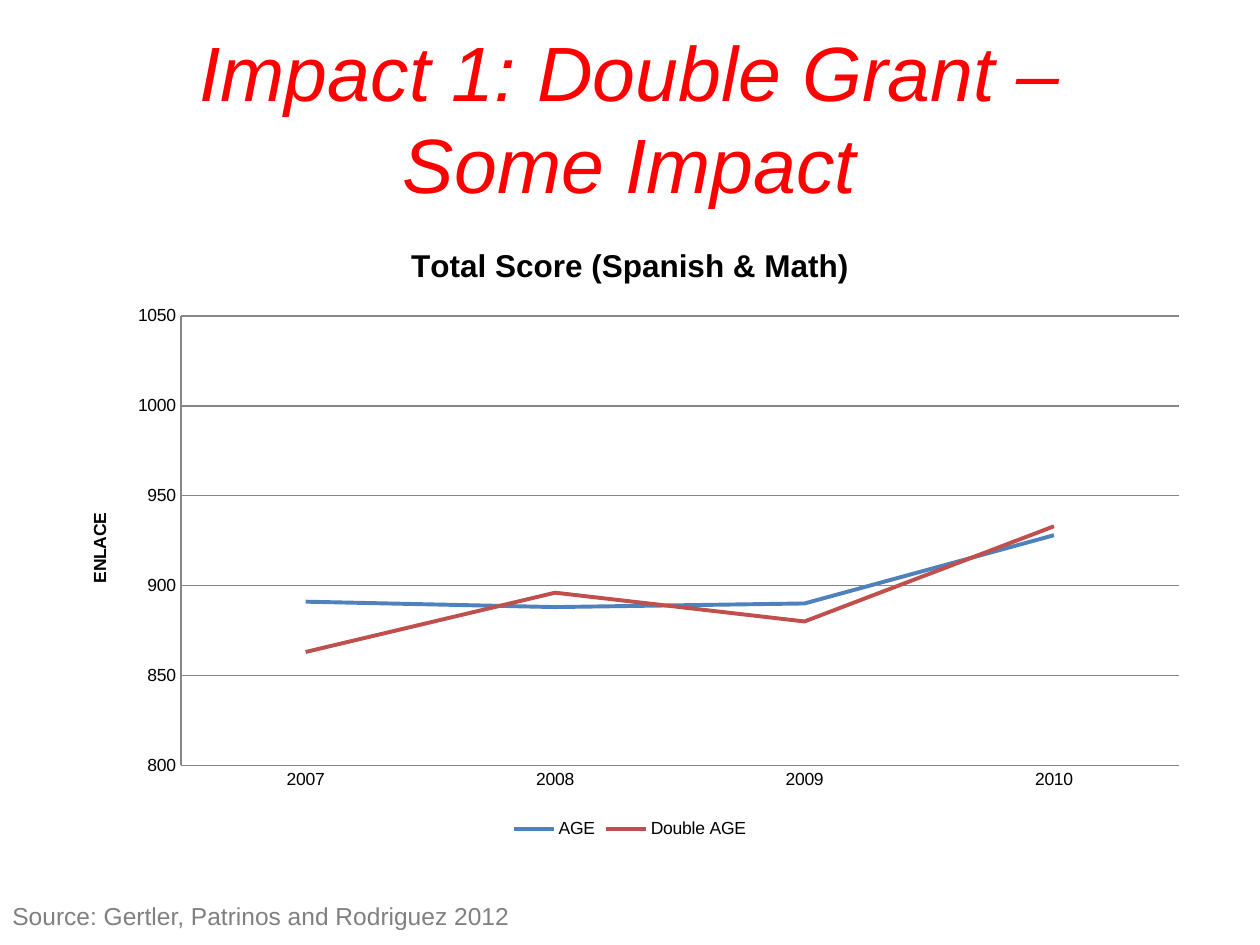
import pptx
import pptx.util
import pptx.chart.data
import pptx.dml.color
import pptx.enum.chart
import pptx.enum.text
import pptx.oxml

RGB = pptx.dml.color.RGBColor
RED = RGB(0xFF, 0, 0)
GRAY = RGB(0x80, 0x80, 0x80)
RULE = RGB(0x86, 0x86, 0x86)
BLACK = RGB(0, 0, 0)
BLUE = RGB(0x4F, 0x81, 0xBD)
BRICK = RGB(0xC0, 0x50, 0x4D)
FONT = "Arial"

TITLE = "Impact 1: Double Grant –\vSome Impact"
SOURCE = "Source: Gertler, Patrinos and Rodriguez 2012"
HEAD = "Total Score (Spanish & Math)"
UNIT = "ENLACE"
YEARS = ["2007", "2008", "2009", "2010"]
SCORES = [
    ("AGE", [891, 888, 890, 928], BLUE),
    ("Double AGE", [863, 896, 880, 933], BRICK),
]
TITLE_BOX = (0, 38, 1260, 157)
CHART_BOX = (63, 220, 1134, 624)
PLOT_BOX = (181, 316, 993, 452)
SOURCE_BOX = (0, 895, 850, 43)


def px(n):
    return round(n * 914400 / 126)


def style(font, size, color, bold=False, italic=False):
    font.name = FONT
    font.size = pptx.util.Pt(size)
    font.color.rgb = color
    font.bold = bold
    font.italic = italic


def label(owner, text, size):
    frame = owner.text_frame
    frame.text = text
    style(frame.paragraphs[0].runs[0].font, size, BLACK, bold=True)


def rule(line):
    line.color.rgb = RULE
    line.width = pptx.util.Pt(0.75)


def place_plot(chart):
    left, top, wide, high = CHART_BOX
    x, y, w, h = PLOT_BOX
    parts = {"x": (x - left) / wide, "y": (y - top) / high,
             "w": w / wide, "h": h / high}
    modes = "".join(f'<c:{k}Mode val="edge"/>' for k in "xy")
    sizes = "".join(f'<c:{k} val="{v:.2f}"/>' if k in "wh"
                    else f'<c:{k} val="{v:.3f}"/>' for k, v in parts.items())
    xml = ('<c:layout xmlns:c="http://schemas.openxmlformats.org/drawingml/2006/chart">'
           f'<c:manualLayout><c:layoutTarget val="inner"/>{modes}{sizes}'
           '</c:manualLayout></c:layout>')
    area = chart.plots[0]._element.getparent()
    for old in area.findall("{*}layout"):
        area.remove(old)
    area.insert(0, pptx.oxml.parse_xml(xml))


def add_title(slide):
    title = slide.shapes.title
    title.left, title.top, title.width, title.height = map(px, TITLE_BOX)
    frame = title.text_frame
    frame.text = TITLE
    frame.vertical_anchor = pptx.enum.text.MSO_ANCHOR.MIDDLE
    para = frame.paragraphs[0]
    para.alignment = pptx.enum.text.PP_ALIGN.CENTER
    for run in para.runs:
        style(run.font, 44, RED, italic=True)


def add_scores(slide):
    data = pptx.chart.data.CategoryChartData()
    data.categories = YEARS
    for name, vals, color in SCORES:
        data.add_series(name, vals)
    kind = pptx.enum.chart.XL_CHART_TYPE.LINE
    chart = slide.shapes.add_chart(kind, *map(px, CHART_BOX), data).chart
    style(chart.font, 10, BLACK)
    label(chart.chart_title, HEAD, 18)
    chart.has_legend = True
    chart.legend.position = pptx.enum.chart.XL_LEGEND_POSITION.BOTTOM
    chart.legend.include_in_layout = False
    chart.plots[0].vary_by_categories = False
    for line, (name, vals, color) in zip(chart.plots[0].series, SCORES):
        line.smooth = False
        line.marker.style = pptx.enum.chart.XL_MARKER_STYLE.NONE
        line.format.line.color.rgb = color
        line.format.line.width = pptx.util.Pt(2.25)
    axis = chart.value_axis
    axis.minimum_scale, axis.maximum_scale, axis.major_unit = 800, 1050, 50
    axis.has_major_gridlines = True
    rule(axis.major_gridlines.format.line)
    label(axis.axis_title, UNIT, 10)
    for side in (axis, chart.category_axis):
        side.major_tick_mark = pptx.enum.chart.XL_TICK_MARK.NONE
        side.minor_tick_mark = pptx.enum.chart.XL_TICK_MARK.NONE
        rule(side.format.line)
    place_plot(chart)


def add_source(slide):
    frame = slide.shapes.add_textbox(*map(px, SOURCE_BOX)).text_frame
    frame.word_wrap = True
    frame.auto_size = pptx.enum.text.MSO_AUTO_SIZE.SHAPE_TO_FIT_TEXT
    frame.text = SOURCE
    style(frame.paragraphs[0].runs[0].font, 14, GRAY)


def main():
    deck = pptx.Presentation()
    deck.slide_width, deck.slide_height = px(1260), px(945)
    slide = deck.slides.add_slide(deck.slide_layouts[5])
    add_title(slide)
    add_scores(slide)
    add_source(slide)
    deck.save("out.pptx")


if __name__ == "__main__":
    main()
